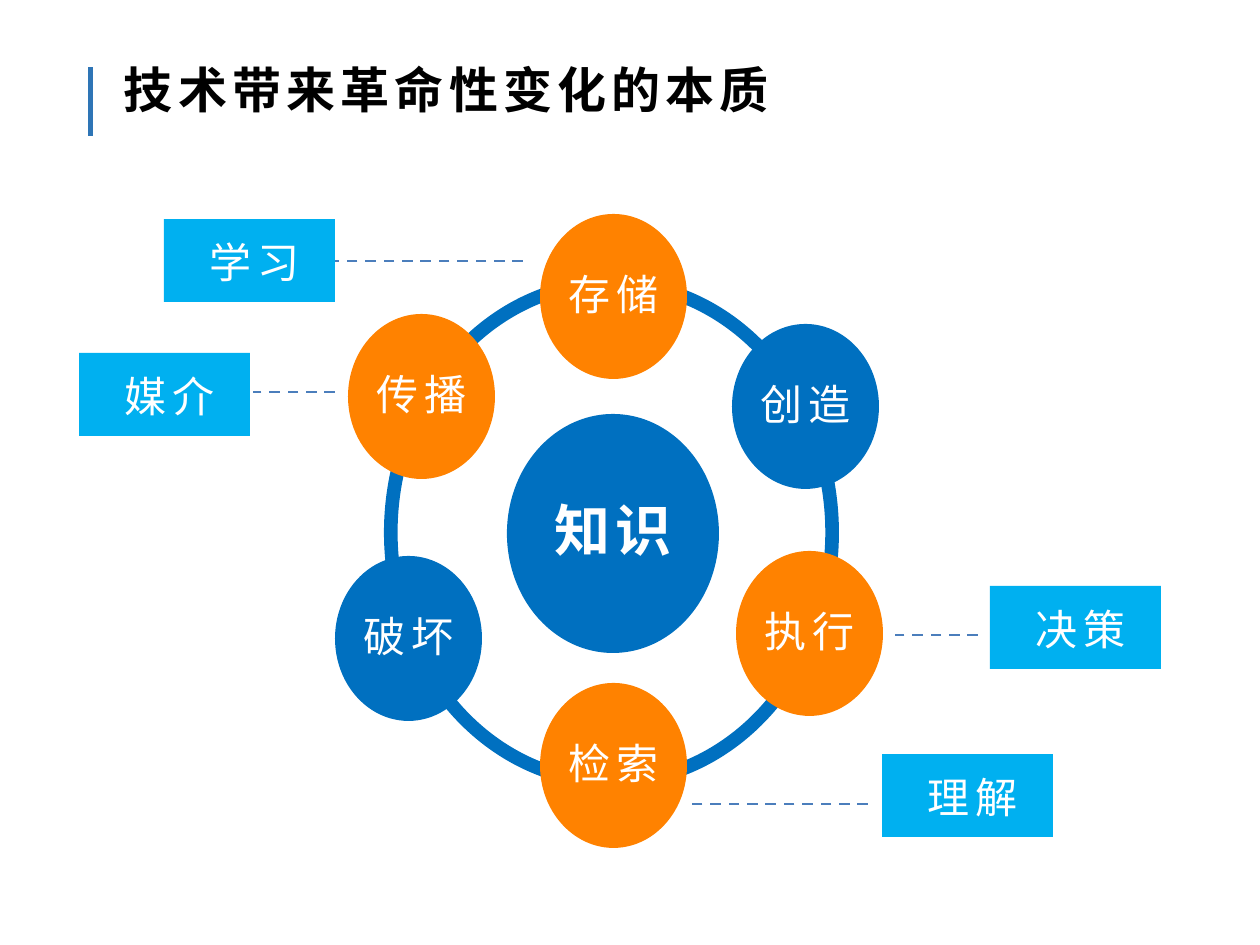
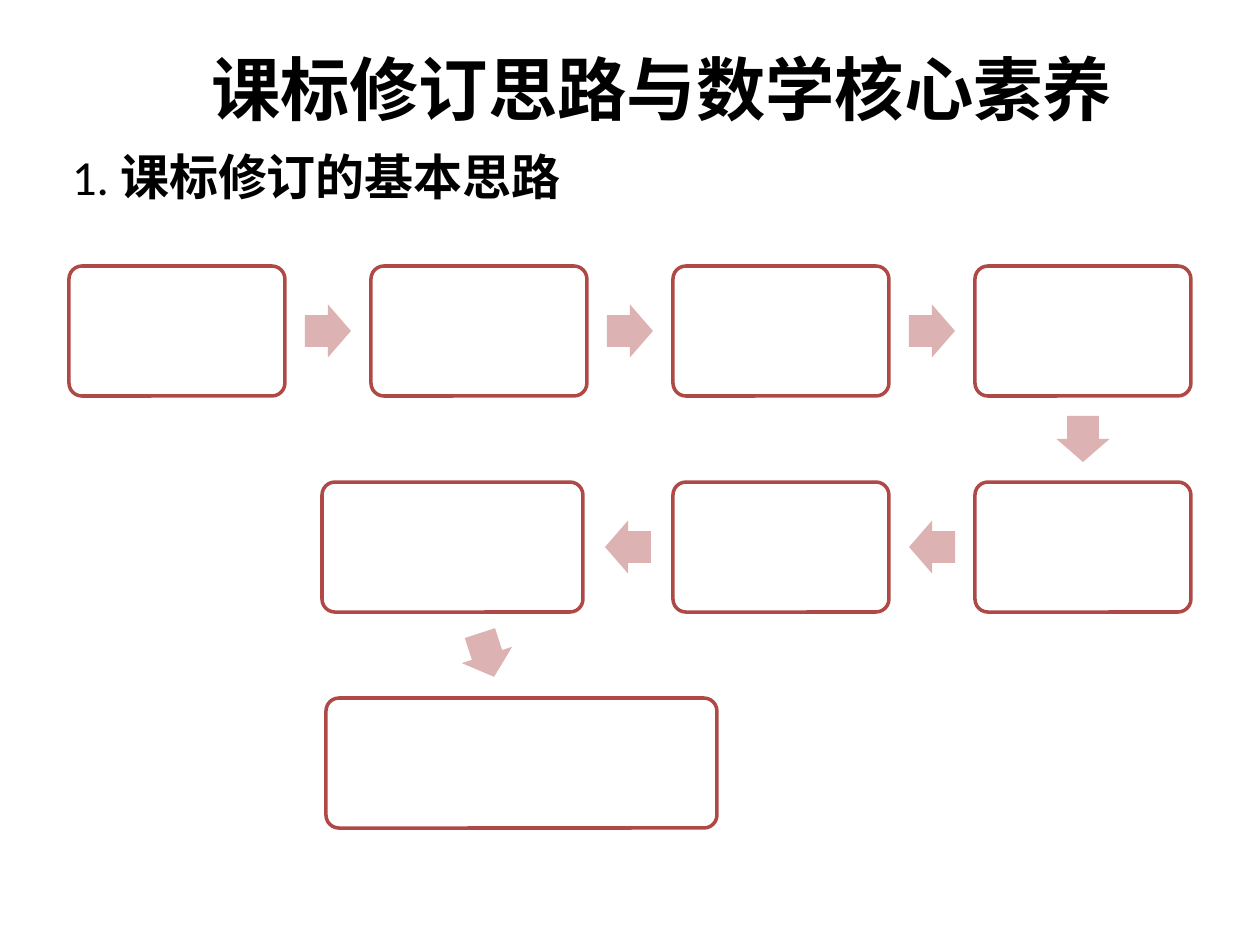
"""Build two slides: a wheel of knowledge functions and a snaking process chain."""
from itertools import pairwise
from math import atan2, degrees

from lxml.etree import SubElement
from pptx import Presentation
from pptx.dml.color import RGBColor
from pptx.enum.dml import MSO_LINE
from pptx.enum.shapes import MSO_CONNECTOR, MSO_SHAPE
from pptx.enum.text import MSO_ANCHOR, PP_ALIGN
from pptx.oxml.ns import qn
from pptx.util import Pt

EMU_PER_PX = 914400 / 126
CJK_FONT = "Noto Sans CJK SC"
LATIN_FONT = "Calibri"

BLACK = RGBColor(0x00, 0x00, 0x00)
WHITE = RGBColor(0xFF, 0xFF, 0xFF)
BLUE = RGBColor(0x00, 0x70, 0xC0)
ORANGE = RGBColor(0xFF, 0x82, 0x00)
SKY = RGBColor(0x00, 0xB0, 0xF0)
STEEL = RGBColor(0x2E, 0x75, 0xB6)
DASH_BLUE = RGBColor(0x4B, 0x7E, 0xBC)
BRICK = RGBColor(0xAE, 0x49, 0x46)
ROSE = RGBColor(0xDC, 0xB3, 0xB2)

WHEEL_TITLE = "技术带来革命性变化的本质"
HUB = ("知识", 507, 414, 212, 239)
NODE_SIZE = (147, 165)
NODES = [
    ("存储", 540, 214, ORANGE),
    ("检索", 540, 683, ORANGE),
    ("创造", 732, 324, BLUE),
    ("传播", 348, 314, ORANGE),
    ("破坏", 335, 556, BLUE),
    ("执行", 736, 551, ORANGE),
]
TAG_SIZE = (171, 83)
TAGS = [
    ("学习", 164, 219, (523, 335, 261)),
    ("媒介", 79, 353, (335, 253, 392)),
    ("决策", 990, 586, (978, 895, 635)),
    ("理解", 882, 754, (868, 687, 804)),
]

CHAIN_TITLE = "课标修订思路与数学核心素养"
CHAIN_HEADING = [("1. ", False), ("课标修订的基本思路", True)]
CARD_WIDTH, CARD_HEIGHT = 216, 130
COLUMNS = [69 + 302 * column for column in range(4)]
ROWS = [266 + 216 * row for row in range(3)]
CARDS = (
    [(left, ROWS[0], CARD_WIDTH) for left in COLUMNS]
    + [(left, ROWS[1], CARD_WIDTH) for left in COLUMNS[:1:-1]]
    + [(322, ROWS[1], 261), (326, ROWS[2], 391)]
)
ARROW_SIZE = (46, 53)


def px(length):
    return round(length * EMU_PER_PX)


def add_figure(slide, kind, box, fill, outline=None):
    figure = slide.shapes.add_shape(kind, *map(px, box))
    figure.shadow.inherit = False
    figure.fill.solid()
    figure.fill.fore_color.rgb = fill
    if outline:
        figure.line.color.rgb = outline
        figure.line.width = Pt(2)
    else:
        figure.line.fill.background()
    return figure


def write(holder, runs, size, color, font=CJK_FONT, spacing=0,
          align=PP_ALIGN.CENTER, anchor=MSO_ANCHOR.MIDDLE, insets=(0, 0), wrap=False):
    frame = holder.text_frame
    frame.word_wrap = wrap
    frame.vertical_anchor = anchor
    frame.margin_left, frame.margin_top = map(px, insets)
    frame.margin_right = frame.margin_bottom = 0
    paragraph = frame.paragraphs[0]
    paragraph.alignment = align
    if spacing:
        paragraph.line_spacing = 0.9
    for words, bold in runs:
        run = paragraph.add_run()
        run.text = words
        run.font.size = Pt(size)
        run.font.bold = bold
        run.font.color.rgb = color
        run.font.name = font
        properties = run.font._element
        SubElement(properties, qn("a:ea")).set("typeface", CJK_FONT)
        if spacing:
            properties.set("spc", str(spacing * 100))


def add_text(slide, box, runs, size, **style):
    write(slide.shapes.add_textbox(*map(px, box)), runs, size, BLACK, **style)


def add_leader(slide, start, end, level):
    leader = slide.shapes.add_connector(
        MSO_CONNECTOR.STRAIGHT, px(start), px(level), px(end), px(level))
    leader.line.color.rgb = DASH_BLUE
    leader.line.width = Pt(1.5)
    leader.line.dash_style = MSO_LINE.DASH
    SubElement(leader._element.spPr, qn("a:effectLst"))


def build_wheel(slide):
    add_figure(slide, MSO_SHAPE.RECTANGLE, (88, 67, 5, 69), STEEL)
    add_text(slide, (112, 66, 755, 66), [(WHEEL_TITLE, True)], 28, spacing=3,
             align=PP_ALIGN.LEFT, anchor=MSO_ANCHOR.TOP, insets=(12, 0))
    ring = add_figure(slide, MSO_SHAPE.DONUT, (384, 276, 455, 513), BLUE)
    ring.adjustments[0] = 0.03
    hub_name, *hub_box = HUB
    hub = add_figure(slide, MSO_SHAPE.OVAL, hub_box, BLUE)
    write(hub, [(hub_name, True)], 32, WHITE, spacing=3)
    for name, left, top, fill in NODES:
        node = add_figure(slide, MSO_SHAPE.OVAL, (left, top, *NODE_SIZE), fill)
        write(node, [(name, False)], 24, WHITE, spacing=3)
    for name, left, top, leader in TAGS:
        add_leader(slide, *leader)
        tag = add_figure(slide, MSO_SHAPE.RECTANGLE, (left, top, *TAG_SIZE), SKY)
        write(tag, [(name, False)], 24, WHITE, spacing=3, insets=(10, 8))


def add_arrow(slide, source, target):
    (left, top, width), (next_left, next_top, next_width) = source, target
    run = next_left + next_width / 2 - left - width / 2
    rise = next_top - top
    if rise:
        center_x = left + width / 2 + run / 2
    else:
        center_x = (min(left + width, next_left + next_width) + max(left, next_left)) / 2
    center_y = (top + next_top + CARD_HEIGHT) / 2
    length, breadth = ARROW_SIZE
    box = (center_x - length / 2, center_y - breadth / 2, length, breadth)
    arrow = add_figure(slide, MSO_SHAPE.RIGHT_ARROW, box, ROSE)
    arrow.adjustments[0] = 0.6
    arrow.adjustments[1] = 0.5
    arrow.rotation = round(degrees(atan2(rise, run)))


def build_chain(slide):
    add_text(slide, (126, 38, 1071, 100), [(CHAIN_TITLE, True)], 39.6,
             font=LATIN_FONT, wrap=True)
    add_text(slide, (59, 147, 1152, 72), CHAIN_HEADING, 28, font=LATIN_FONT,
             align=PP_ALIGN.LEFT, anchor=MSO_ANCHOR.TOP, insets=(13, 0), wrap=True)
    for left, top, width in CARDS:
        card = add_figure(slide, MSO_SHAPE.ROUNDED_RECTANGLE,
                          (left, top, width, CARD_HEIGHT), WHITE, BRICK)
        card.adjustments[0] = 0.1
    for source, target in pairwise(CARDS):
        add_arrow(slide, source, target)


def main():
    deck = Presentation()
    deck.slide_width, deck.slide_height = px(1260), px(945)
    for build in (build_wheel, build_chain):
        build(deck.slides.add_slide(deck.slide_layouts[6]))
    deck.save("out.pptx")


if __name__ == "__main__":
    main()
